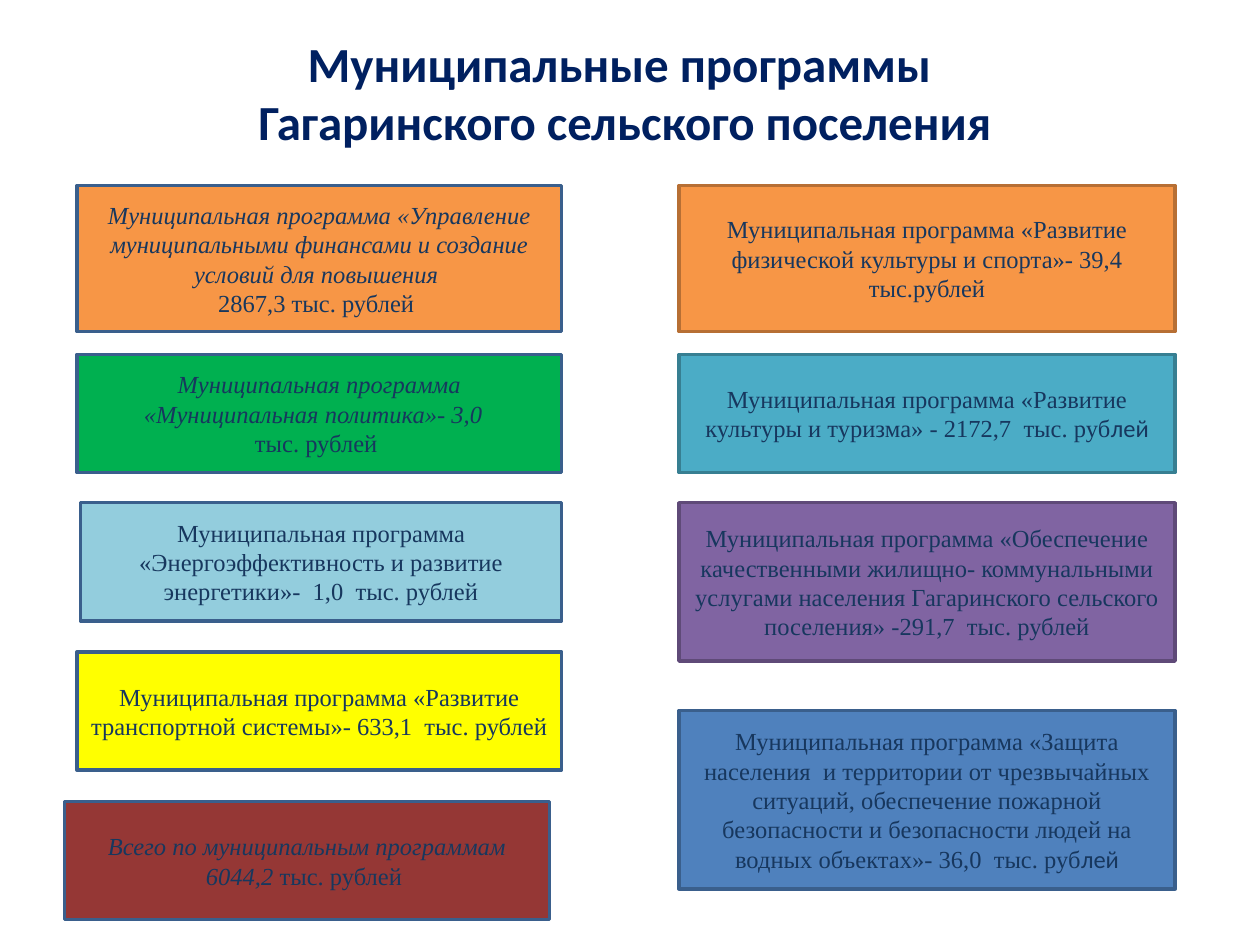
"""Build the slide listing the municipal programmes of the Gagarinskoye settlement."""
from dataclasses import dataclass

from pptx import Presentation
from pptx.dml.color import RGBColor
from pptx.enum.shapes import MSO_SHAPE as Shape
from pptx.enum.text import MSO_ANCHOR as Anchor, MSO_AUTO_SIZE as AutoSize, PP_ALIGN as Align
from pptx.text.text import Font
from pptx.util import Pt

COLORS = {
    "title": "002060", "text": "17375E", "orange": "F79646", "green": "00B050",
    "pale_blue": "93CDDD", "yellow": "FFFF00", "red": "953735", "teal": "4BACC6",
    "purple": "8064A2", "blue": "4F81BD", "blue_edge": "3A5F8C",
    "orange_edge": "B76F34", "teal_edge": "377F92", "purple_edge": "5F4A78",
}
SERIF, SANS = "Times New Roman", "Calibri"
TITLE_LINES = ("Муниципальные программы ", "Гагаринского сельского поселения")
LEFT_X, LEFT_WIDTH = 44, 277
RIGHT_X, RIGHT_WIDTH = 388, 283.5
ROW_TOPS = (106, 202.5, 287.25, 372.5, 458)
TALL, LOW = 83.5, 67.5


@dataclass(frozen=True)
class Span:
    """A piece of text with its own style."""
    text: str
    italic: bool = False
    font: str = SERIF


@dataclass(frozen=True)
class Box:
    """A coloured programme box, measured in points."""
    left: float
    top: float
    width: float
    height: float
    fill: str
    edge: str
    paragraphs: tuple[tuple[Span, ...], ...]


BOXES = (
    Box(LEFT_X, ROW_TOPS[0], LEFT_WIDTH, TALL, "orange", "blue_edge", (
        (Span("Муниципальная программа «Управление муниципальными финансами "
              "и создание условий для повышения ", italic=True),),
        (Span("2867,3 тыс. рублей "),))),
    Box(LEFT_X, ROW_TOPS[1], LEFT_WIDTH, LOW, "green", "blue_edge", (
        (Span("Муниципальная программа «Муниципальная политика»- 3,0  ", italic=True),),
        (Span("тыс. рублей "),))),
    Box(LEFT_X + 2, ROW_TOPS[2], LEFT_WIDTH - 2, LOW, "pale_blue", "blue_edge", (
        (Span("Муниципальная программа «Энергоэффективность и развитие "
              "энергетики»-  1,0  тыс. рублей"),),)),
    Box(LEFT_X, ROW_TOPS[3], LEFT_WIDTH, LOW, "yellow", "blue_edge", (
        (Span("Муниципальная программа «Развитие транспортной системы»- "
              "633,1  тыс. рублей"),),)),
    Box(LEFT_X - 7, ROW_TOPS[4], LEFT_WIDTH, LOW, "red", "blue_edge", (
        (Span("Всего по муниципальным программам 6044,2 ", italic=True),
         Span("тыс. рублей ")),)),
    Box(RIGHT_X, ROW_TOPS[0], RIGHT_WIDTH, TALL, "orange", "orange_edge", (
        (Span("Муниципальная программа «Развитие физической культуры "
              "и спорта»- 39,4 тыс.рублей"),),)),
    Box(RIGHT_X, ROW_TOPS[1], RIGHT_WIDTH, LOW, "teal", "teal_edge", (
        (Span("Муниципальная программа «Развитие культуры и туризма» - "
              "2172,7  тыс. руб"), Span("лей", font=SANS)),)),
    Box(RIGHT_X, ROW_TOPS[2], RIGHT_WIDTH, 90.5, "purple", "purple_edge", (
        (Span("Муниципальная программа «Обеспечение качественными жилищно- "
              "коммунальными услугами населения Гагаринского сельского "
              "поселения» -291,7  тыс. рублей"),),)),
    Box(RIGHT_X, 406, RIGHT_WIDTH, 102, "blue", "blue_edge", (
        (Span("Муниципальная программа «Защита населения  и территории от "
              "чрезвычайных ситуаций, обеспечение пожарной безопасности и "
              "безопасности людей на водных объектах»- 36,0  тыс. руб"),
         Span("лей", font=SANS)),)),
)


def color(name: str) -> RGBColor:
    """Look up a named colour."""
    return RGBColor.from_string(COLORS[name])


def style_font(font: Font, size: float, color_name: str) -> None:
    """Set the size and colour of a font."""
    font.size = Pt(size)
    font.color.rgb = color(color_name)


def write_title(title) -> None:
    """Place and fill the title placeholder."""
    title.left, title.top, title.width, title.height = Pt(138), Pt(15), Pt(438), Pt(75)
    frame = title.text_frame
    frame.text = "\n".join(TITLE_LINES)
    frame.word_wrap = False
    frame.auto_size = AutoSize.NONE
    for paragraph in frame.paragraphs:
        paragraph.alignment = Align.CENTER
        style_font(paragraph.font, 28, "title")
        paragraph.font.name = SANS
        paragraph.font.bold = True


def write_paragraph(paragraph, spans: tuple[Span, ...]) -> None:
    """Fill a centred paragraph, styling runs only where they differ."""
    first = spans[0]
    paragraph.alignment = Align.CENTER
    style_font(paragraph.font, 14, "text")
    paragraph.font.name, paragraph.font.italic = first.font, first.italic
    for span in spans:
        run = paragraph.add_run()
        run.text = span.text
        if span.font != first.font:
            run.font.name = span.font
        if span.italic != first.italic:
            run.font.italic = span.italic


def draw_box(slide, box: Box) -> None:
    """Draw one programme box with its text."""
    shape = slide.shapes.add_shape(
        Shape.RECTANGLE, Pt(box.left), Pt(box.top), Pt(box.width), Pt(box.height))
    shape.shadow.inherit = False
    shape.fill.solid()
    shape.fill.fore_color.rgb = color(box.fill)
    shape.line.color.rgb = color(box.edge)
    shape.line.width = Pt(2)
    frame = shape.text_frame
    frame.word_wrap = True
    frame.vertical_anchor = Anchor.MIDDLE
    for index, spans in enumerate(box.paragraphs):
        write_paragraph(frame.add_paragraph() if index else frame.paragraphs[0], spans)


def main() -> None:
    """Build and save the presentation."""
    presentation = Presentation()
    presentation.slide_width, presentation.slide_height = Pt(720), Pt(540)
    slide = presentation.slides.add_slide(presentation.slide_layouts.get_by_name("Title Only"))
    write_title(slide.shapes.title)
    for box in BOXES:
        draw_box(slide, box)
    presentation.save("out.pptx")


if __name__ == "__main__":
    main()
